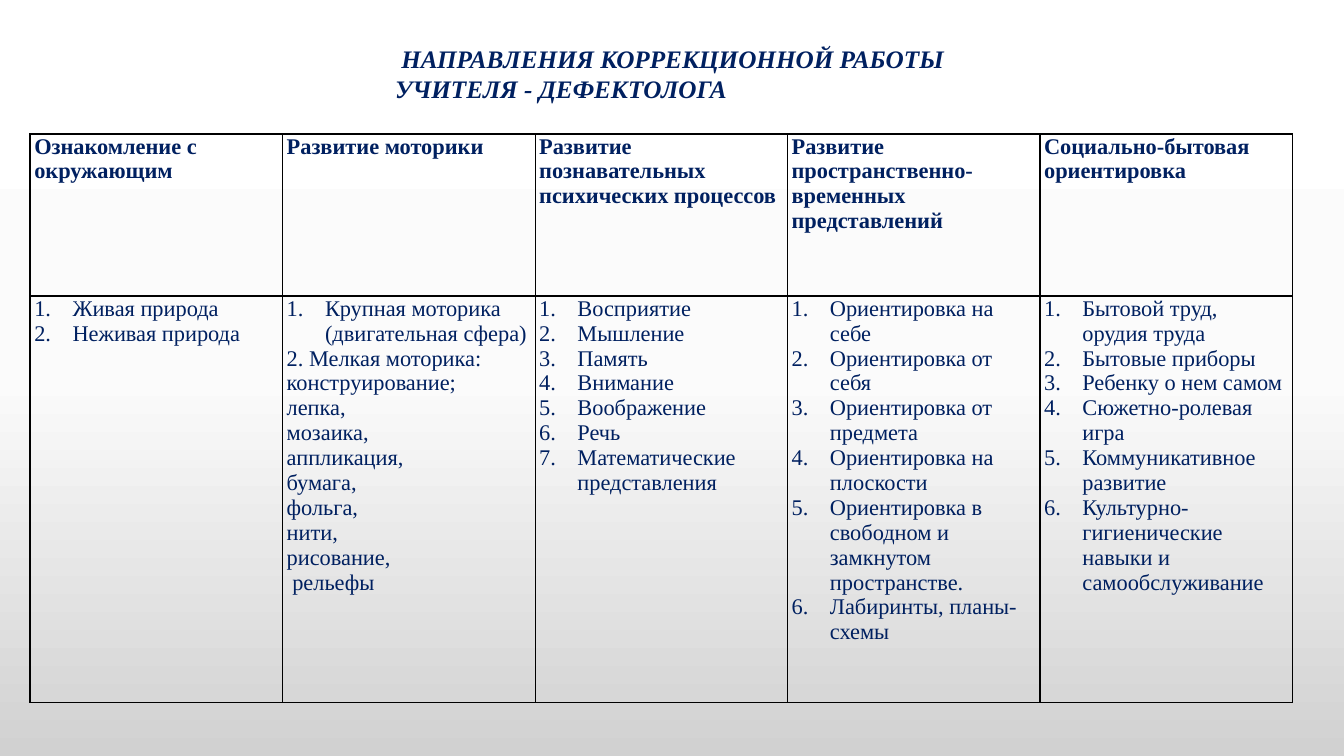
from lxml import etree
from pptx import Presentation, util as u
from pptx.dml.color import RGBColor
from pptx.enum import text
from pptx.oxml.ns import qn

HEADINGS = [
    "Ознакомление с окружающим",
    "Развитие моторики",
    "Развитие познавательных психических процессов",
    "Развитие пространственно-временных представлений",
    "Социально-бытовая ориентировка",
]
# Each column: numbered items, then plain lines
TOPICS = [
    (["Живая природа", "Неживая природа"], []),
    (["Крупная моторика (двигательная сфера)"],
     ["2. Мелкая моторика: конструирование;", "лепка,", "мозаика,", "аппликация,",
      "бумага,", "фольга,", "нити,", "рисование,", " рельефы"]),
    (["Восприятие", "Мышление", "Память", "Внимание", "Воображение", "Речь",
      "Математические представления"], []),
    (["Ориентировка на себе", "Ориентировка от себя", "Ориентировка от предмета",
      "Ориентировка на плоскости", "Ориентировка в свободном и замкнутом пространстве.",
      "Лабиринты, планы-схемы"], []),
    (["Бытовой труд, орудия труда", "Бытовые приборы", "Ребенку о нем самом",
      "Сюжетно-ролевая игра", "Коммуникативное развитие",
      "Культурно-гигиенические навыки и самообслуживание"], []),
]


def color(value):
    return RGBColor.from_string(value)


class SlideBuilder:
    font = "Times New Roman"
    ink = "002060"
    border = "000000"

    def __init__(self, slide):
        self.slide = slide

    def background(self, stops, angle):
        fill = self.slide.background.fill
        fill.gradient()
        fill.gradient_angle = angle
        stop_list = next(self.slide.element.iter(qn("a:gsLst")))
        for stop in list(stop_list):
            stop_list.remove(stop)
        for position, value in stops:
            stop = etree.SubElement(stop_list, qn("a:gs"), pos=str(position * 1000))
            etree.SubElement(stop, qn("a:srgbClr"), val=value)

    def fill_text(self, frame, lines, size, bold=False, italic=False):
        frame.text = "\n".join(lines)
        for paragraph in frame.paragraphs:
            for run in paragraph.runs:
                run.font.name = self.font
                run.font.size = u.Pt(size)
                run.font.bold = bold
                run.font.italic = italic
                run.font.color.rgb = color(self.ink)

    def title(self, lines, left, top, width, height):
        box = self.slide.shapes.add_textbox(
            u.Inches(left), u.Inches(top), u.Inches(width), u.Inches(height))
        box.text_frame.word_wrap = False
        box.text_frame.vertical_anchor = text.MSO_ANCHOR.TOP
        self.fill_text(box.text_frame, lines, 18, bold=True, italic=True)

    def number(self, paragraph):
        properties = paragraph._p.get_or_add_pPr()
        indent = u.Inches(0.38)
        properties.set("marL", str(indent))
        properties.set("indent", str(-indent))
        etree.SubElement(properties, qn("a:buAutoNum"), type="arabicPeriod")

    def cell(self, cell, lines, left_border, right_border, bold=False, numbered=0):
        cell.margin_left = cell.margin_right = u.Inches(0.04)
        cell.margin_top = cell.margin_bottom = 0
        properties = cell._tc.get_or_add_tcPr()
        sides = {"L": left_border, "R": right_border, "T": 1.5, "B": 1.5}
        for side, width in sides.items():
            line = etree.SubElement(properties, qn(f"a:ln{side}"), w=str(u.Pt(width)))
            fill = etree.SubElement(line, qn("a:solidFill"))
            etree.SubElement(fill, qn("a:srgbClr"), val=self.border)
        cell.fill.background()
        self.fill_text(cell.text_frame, lines, 16, bold=bold)
        for paragraph in cell.text_frame.paragraphs[:numbered]:
            self.number(paragraph)

    def table(self, headings, topics, left, top, width, row_heights):
        count = len(headings)
        table = self.slide.shapes.add_table(
            len(row_heights), count, u.Inches(left), u.Inches(top),
            u.Inches(width), u.Inches(sum(row_heights))).table
        table.first_row = table.horz_banding = False
        for row, height in zip(table.rows, row_heights):
            row.height = u.Inches(height)
        for index, (heading, (items, plain)) in enumerate(zip(headings, topics)):
            table.columns[index].width = u.Inches(width / count)
            borders = (1.5 if index == 0 else 1, 1.5 if index == count - 1 else 1)
            self.cell(table.cell(0, index), [heading], *borders, bold=True)
            self.cell(table.cell(1, index), items + plain, *borders, numbered=len(items))


def main():
    presentation = Presentation()
    presentation.slide_width = u.Inches(13.33)
    presentation.slide_height = u.Inches(7.5)
    builder = SlideBuilder(presentation.slides.add_slide(presentation.slide_layouts[6]))

    # Background
    builder.background([(0, "FFFFFF"), (50, "FBFBFB"), (100, "D1D1D1")], 270)
    # Table of work areas
    builder.table(HEADINGS, TOPICS, 0.3, 1.33, 12.52, [1.61, 4.03])
    # Title
    builder.title([" НАПРАВЛЕНИЯ КОРРЕКЦИОННОЙ РАБОТЫ", "УЧИТЕЛЯ - ДЕФЕКТОЛОГА"],
                  3.82, 0.38, 5.84, 1.01)

    presentation.save("out.pptx")


if __name__ == "__main__":
    main()
